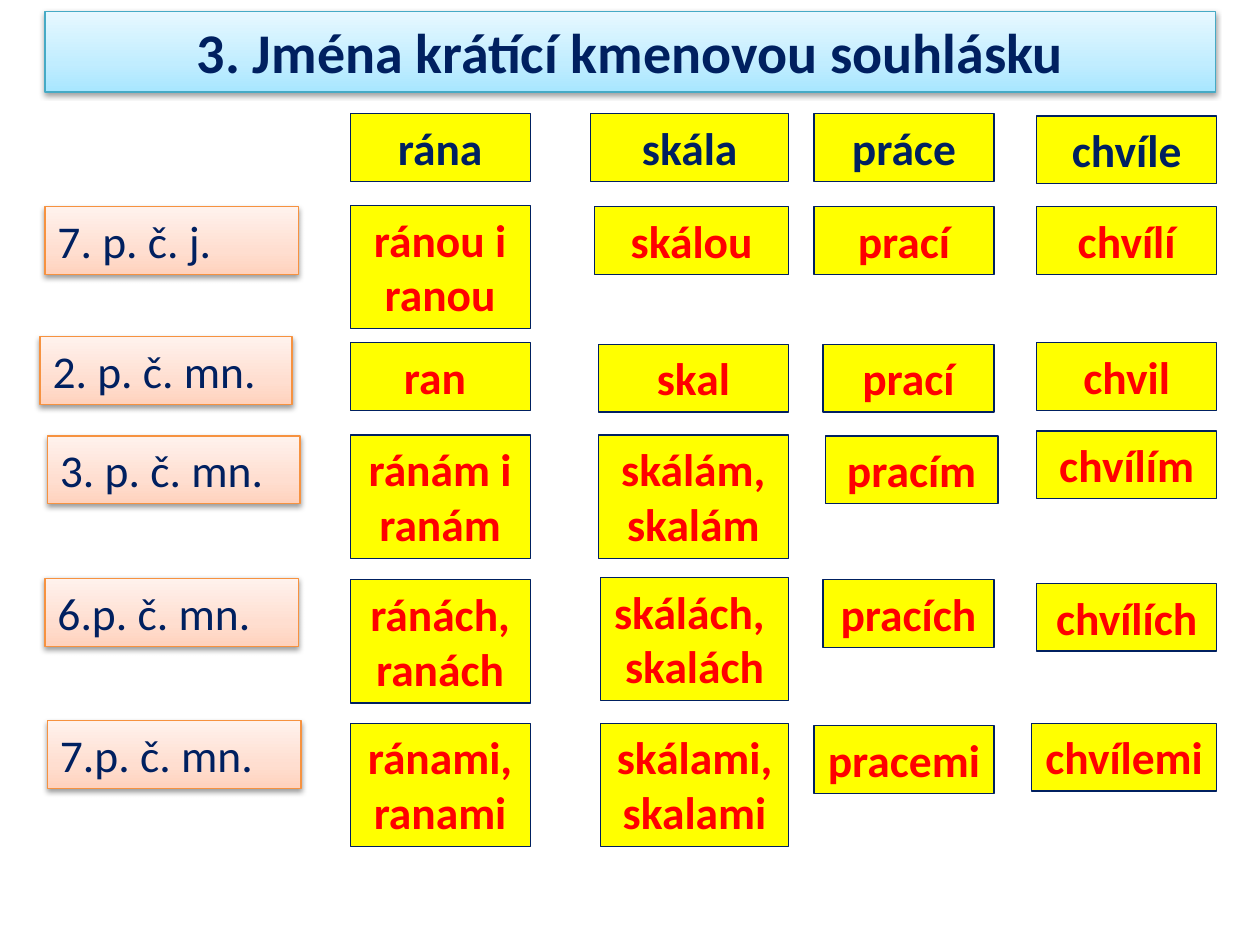
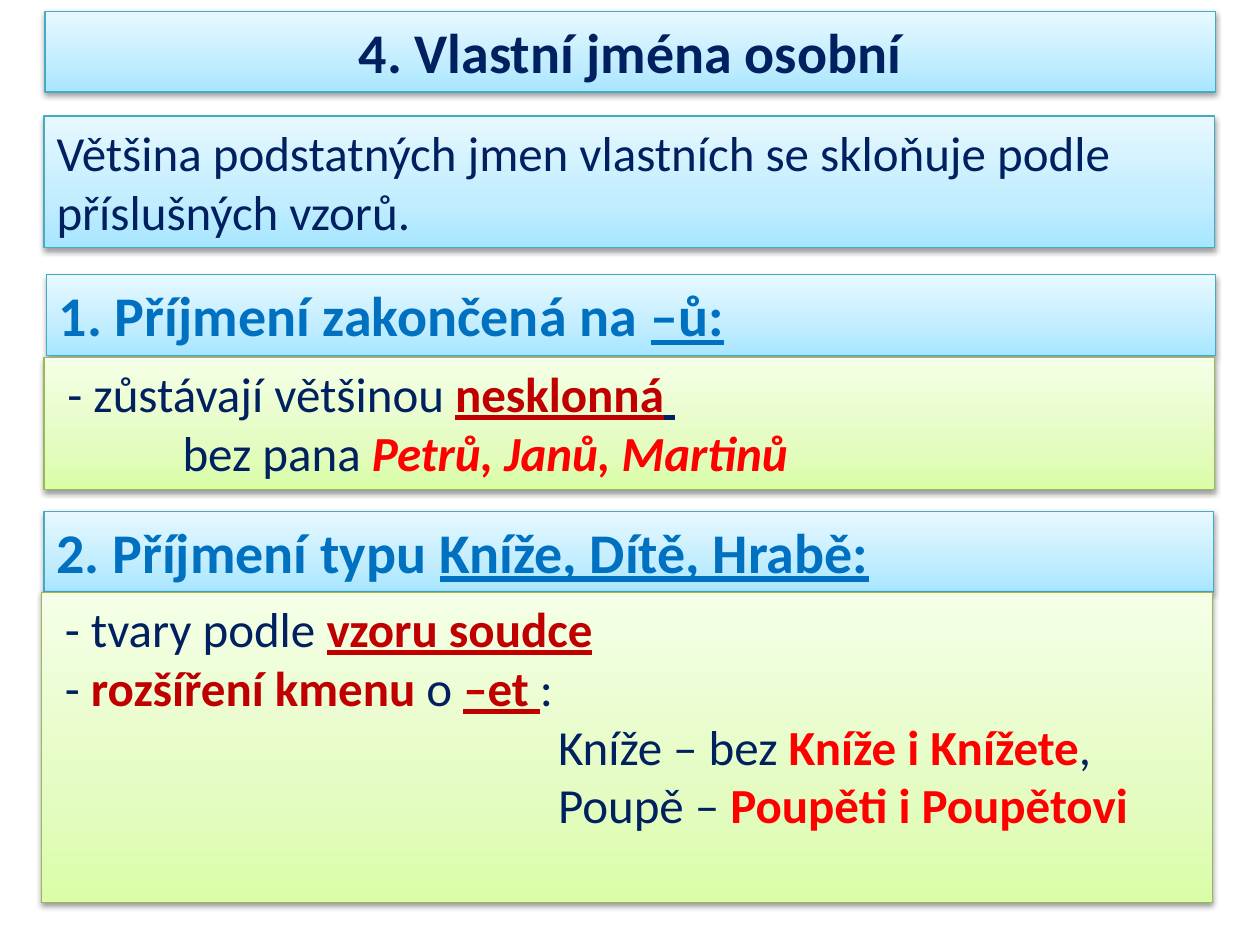
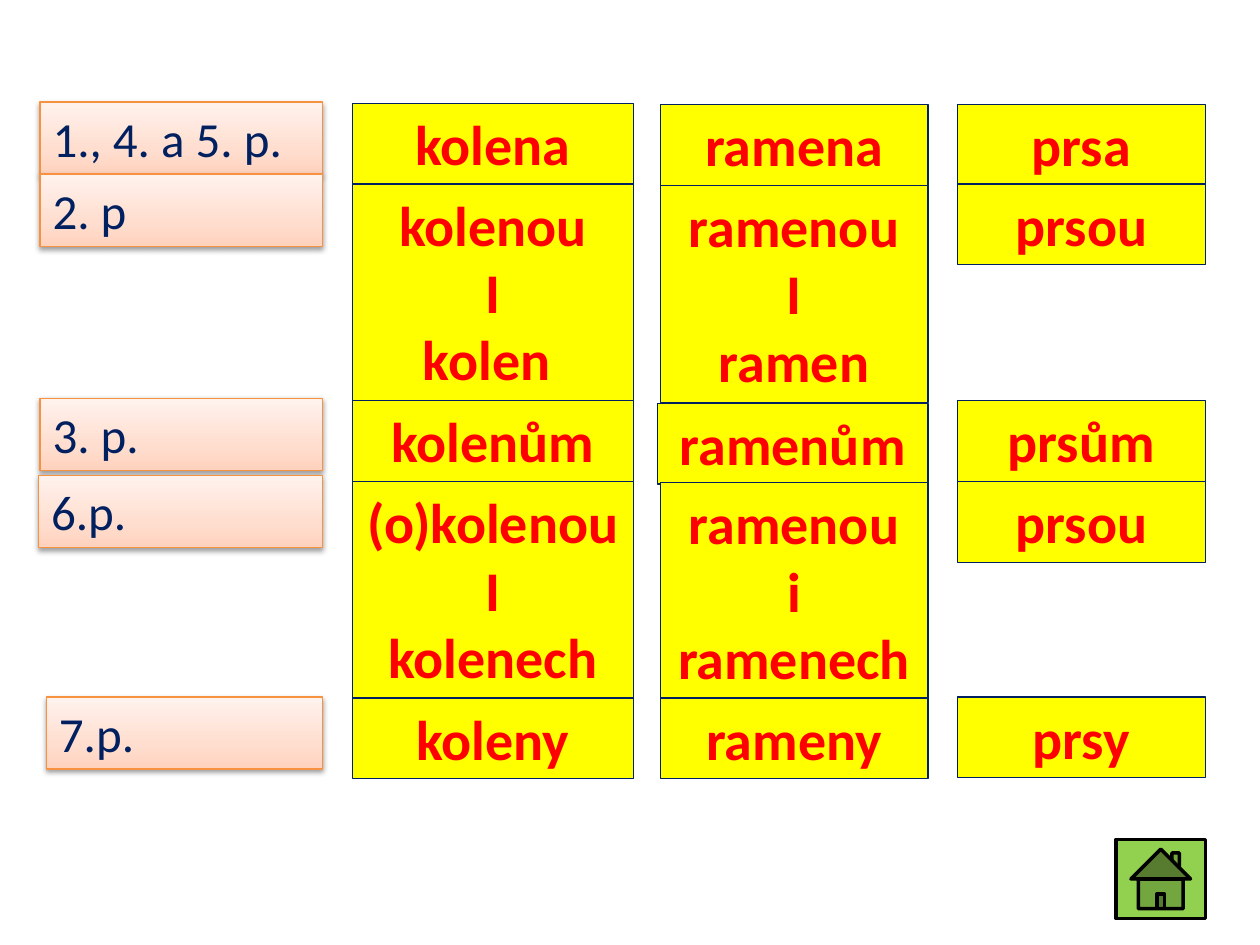
from copy import deepcopy
from dataclasses import dataclass

from lxml import etree
from pptx import Presentation
from pptx.dml.color import RGBColor
from pptx.enum import shapes, text
from pptx.oxml import ns
from pptx.util import Cm, Pt

FONT = "Calibri"
NAVY = RGBColor(0x00, 0x20, 0x60)
BLUE = RGBColor(0x00, 0x70, 0xC0)
RED = RGBColor(0xFF, 0x00, 0x00)
WINE = RGBColor(0xC0, 0x00, 0x00)
YELLOW = RGBColor(0xFF, 0xFF, 0x00)
GREEN = RGBColor(0x92, 0xD0, 0x50)
BLACK = RGBColor(0x00, 0x00, 0x00)


@dataclass
class Look:
    """Gradient stops from bottom to top, and the line colour."""
    low: RGBColor
    mid: RGBColor
    high: RGBColor
    edge: RGBColor


SKY = Look(RGBColor(0xA7, 0xE6, 0xFF), RGBColor(0xC1, 0xED, 0xFF),
           RGBColor(0xE7, 0xF8, 0xFF), RGBColor(0x46, 0xAA, 0xC5))
PEACH = Look(RGBColor(0xFF, 0xD2, 0xBD), RGBColor(0xFF, 0xDE, 0xD0),
             RGBColor(0xFF, 0xF2, 0xED), RGBColor(0xF6, 0x92, 0x40))
LIME = Look(RGBColor(0xDA, 0xFD, 0xA7), RGBColor(0xE4, 0xFC, 0xC2),
            RGBColor(0xF5, 0xFF, 0xE7), RGBColor(0x98, 0xB9, 0x55))


@dataclass
class Style:
    color: RGBColor = NAVY
    bold: bool = False
    ital: bool = False
    under: bool = False


PLAIN = Style()
STRONG = Style(bold=True)
FORM = Style(RED, bold=True)
NAME = Style(RED, bold=True, ital=True)
TERM = Style(WINE, bold=True)
KEY = Style(WINE, bold=True, under=True)
HEAD = Style(BLUE, bold=True)
ENDING = Style(BLUE, bold=True, under=True)


@dataclass
class Cell:
    """Text of one box; inset and out move its left and right edges."""
    words: str
    top: float
    inset: float = 0
    out: float = 0
    rows: int = 0


def tall(rows, size):
    """Height in cm of a box that fits its lines of text."""
    return 0.25 + 0.043 * size * rows


def place(shape, left, top, width, height):
    shape.left, shape.top = Cm(left), Cm(top)
    shape.width, shape.height = Cm(width), Cm(height)


def glow(shape, look):
    """Gradient fill, thin edge and soft shadow below."""
    shape.fill.gradient()
    shape.fill.gradient_angle = 90
    stops = shape.element.spPr.find(".//" + ns.qn("a:gsLst"))
    stops.insert(1, deepcopy(stops[0]))
    tones = zip((0, 0.35, 1), (look.low, look.mid, look.high))
    for stop, (spot, tone) in zip(shape.fill.gradient_stops, tones):
        stop.position = spot
        stop.color.rgb = tone
    edge(shape, look.edge, 0.75)
    effects = shape.element.spPr.find(ns.qn("a:effectLst"))
    shade = etree.SubElement(effects, ns.qn("a:outerShdw"), blurRad="40000",
                             dist="20000", dir="5400000", rotWithShape="0")
    tone = etree.SubElement(shade, ns.qn("a:srgbClr"), val="000000")
    etree.SubElement(tone, ns.qn("a:alpha"), val="38000")


def edge(shape, color, width):
    shape.line.color.rgb = color
    shape.line.width = Pt(width)
    shape.shadow.inherit = False


def flat(shape, fill, color, width=0.75):
    shape.fill.solid()
    shape.fill.fore_color.rgb = fill
    edge(shape, color, width)


def write(shape, paras, size, align=text.PP_ALIGN.LEFT):
    """Fill a shape with paragraphs, each an indent in cm and its runs."""
    frame = shape.text_frame
    frame.word_wrap = True
    frame.auto_size = text.MSO_AUTO_SIZE.NONE
    frame.vertical_anchor = text.MSO_ANCHOR.TOP
    for i, (indent, runs) in enumerate(paras):
        para = frame.add_paragraph() if i else frame.paragraphs[0]
        para.alignment = align
        if indent:
            para._p.get_or_add_pPr().set("marL", str(Cm(indent)))
        for words, style in runs:
            run = para.add_run()
            run.text = words
            font = run.font
            font.name, font.size = FONT, Pt(size)
            font.color.rgb = style.color
            font.bold, font.italic = style.bold, style.ital
            font.underline = style.under


def block(slide, left, top, width, height):
    return slide.shapes.add_shape(shapes.MSO_SHAPE.RECTANGLE, Cm(left), Cm(top),
                                  Cm(width), Cm(height))


def title(slide, words):
    shape = slide.shapes.title
    place(shape, 0.91, 0.23, 23.6, tall(1, 32))
    glow(shape, SKY)
    write(shape, [(0, [(words, STRONG)])], 32, text.PP_ALIGN.CENTER)


def column(slide, left, top, width, size, cells, look=None, head=False):
    """Stack of case labels (with a look) or of yellow word forms."""
    for i, cell in enumerate(cells):
        lines = cell.words.split("\n")
        box = block(slide, left + cell.inset, top + cell.top,
                    width - cell.inset + cell.out,
                    tall(cell.rows or len(lines), size))
        if look:
            glow(box, look)
            style, align = PLAIN, text.PP_ALIGN.LEFT
        else:
            flat(box, YELLOW, NAVY)
            style = STRONG if head and i == 0 else FORM
            align = text.PP_ALIGN.CENTER
        write(box, [(0, [(line, style)]) for line in lines], size, align)


def panel(slide, left, top, width, look, size, paras, height=0, rows=0):
    box = block(slide, left, top, width,
                height or tall(rows or len(paras), size))
    glow(box, look)
    write(box, paras, size)


def nouns(slide):
    title(slide, "3. Jména krátící kmenovou souhlásku")
    top, size = 2.29, 26
    column(slide, 0.91, top, 5.11, size, [
        Cell("7. p. č. j.", 1.88),
        Cell("2. p. č. mn.", 4.5, -0.1, -0.13),
        Cell("3. p. č. mn.", 6.5, 0.05, 0.03),
        Cell("6.p. č. mn.", 9.37),
        Cell("7.p. č. mn.", 12.24, 0.05, 0.05)], PEACH)
    words = [
        (7.06, 3.63, [
            Cell("rána", 0), Cell("ránou i\nranou", 1.85),
            Cell("ran ", 4.62), Cell("ránám i ranám", 6.48, rows=2),
            Cell("ránách,\nranách", 9.4), Cell("ránami,\nranami", 12.29)]),
        (11.91, 3.99, [
            Cell("skála", 0), Cell("skálou", 1.88, 0.08),
            Cell("skal", 4.65, 0.15),
            Cell("skálám, skalám", 6.48, 0.15, rows=2),
            Cell("skálách, \nskalách", 9.35, 0.2),
            Cell("skálami,\nskalami", 12.29, 0.2)]),
        (20.9, 3.63, [
            Cell("chvíle", 0.05), Cell("chvílí", 1.88), Cell("chvil", 4.62),
            Cell("chvílím", 6.4), Cell("chvílích", 9.47),
            Cell("chvílemi", 12.29, -0.1)]),
        (16.41, 3.63, [
            Cell("práce", 0), Cell("prací", 1.88), Cell("prací", 4.65, 0.18),
            Cell("pracím", 6.5, 0.23, 0.08), Cell("pracích", 9.4, 0.18),
            Cell("pracemi", 12.34)])]
    for left, width, cells in words:
        column(slide, left, top, width, size, cells, head=True)


def names(slide):
    title(slide, "4. Vlastní jména osobní")
    dash, tab = 0.22, 2.54
    panel(slide, 0.89, 2.34, 23.6, SKY, 28, [
        (0, [("Většina podstatných jmen vlastních se skloňuje podle "
              "příslušných vzorů.", PLAIN)])], rows=2)
    panel(slide, 0.94, 5.54, 23.57, SKY, 32, [
        (0, [("1. Příjmení zakončená na ", HEAD), ("–ů:", ENDING)])])
    panel(slide, 0.89, 7.21, 23.6, LIME, 28, [
        (dash, [("- zůstávají většinou ", PLAIN), ("nesklonná", KEY),
                (" ", Style(under=True))]),
        (tab, [("bez pana ", PLAIN), ("Petrů, Janů, Martinů", NAME)])])
    panel(slide, 0.89, 10.31, 23.57, SKY, 32, [
        (0, [("2. Příjmení typu ", HEAD), ("Kníže, Dítě, Hrabě:", ENDING)])])
    panel(slide, 0.84, 11.94, 23.6, LIME, 28, [
        (dash, [("- tvary podle ", PLAIN), ("vzoru soudce", KEY)]),
        (dash, [("- ", PLAIN), ("rozšíření kmenu ", TERM), ("o ", PLAIN),
                ("–et ", KEY), (":", PLAIN)]),
        (4 * tab, [("Kníže – bez ", PLAIN), ("Kníže i Knížete", FORM),
                   (",", PLAIN)]),
        (4 * tab, [("Poupě – ", PLAIN), ("Poupěti i Poupětovi", FORM)])],
        height=6.25)


def duals(slide):
    top = 2.06
    column(slide, 0.81, top, 5.69, 28, [
        Cell("1., 4. a 5. p.", 0), Cell("2. p", 1.45), Cell("3. p.", 5.97),
        Cell("6.p.", 7.52, -0.03), Cell("7.p.", 11.99, 0.13)], PEACH)
    words = [
        (7.11, 5.66, [
            Cell("kolena", 0.03), Cell("kolenou\nI\nkolen ", 1.65),
            Cell("kolenům", 6.02), Cell("(o)kolenou\nI\nkolenech", 7.65),
            Cell("koleny", 12.01)]),
        (13.31, 5.4, [
            Cell("ramena", 0.05), Cell("ramenou\nI\nramen", 1.68),
            Cell("ramenům", 6.07, -0.05), Cell("ramenou\ni\nramenech", 7.67),
            Cell("rameny", 12.01)]),
        (19.3, 5, [
            Cell("prsa", 0.05), Cell("prsou", 1.65), Cell("prsům", 6.02),
            Cell("prsou", 7.65), Cell("prsy", 11.99)])]
    for left, width, cells in words:
        column(slide, left, top, width, 32, cells)
    home = slide.shapes.add_shape(shapes.MSO_SHAPE.ACTION_BUTTON_HOME,
                                  Cm(22.5), Cm(16.92), Cm(1.8), Cm(1.6))
    flat(home, GREEN, BLACK, 2)


def main():
    deck = Presentation()
    deck.slide_width, deck.slide_height = Cm(25.4), Cm(19.05)
    titled = deck.slide_layouts.get_by_name("Title Only")
    blank = deck.slide_layouts.get_by_name("Blank")
    for layout, build in ((titled, nouns), (titled, names), (blank, duals)):
        build(deck.slides.add_slide(layout))
    deck.save("out.pptx")


if __name__ == "__main__":
    main()
